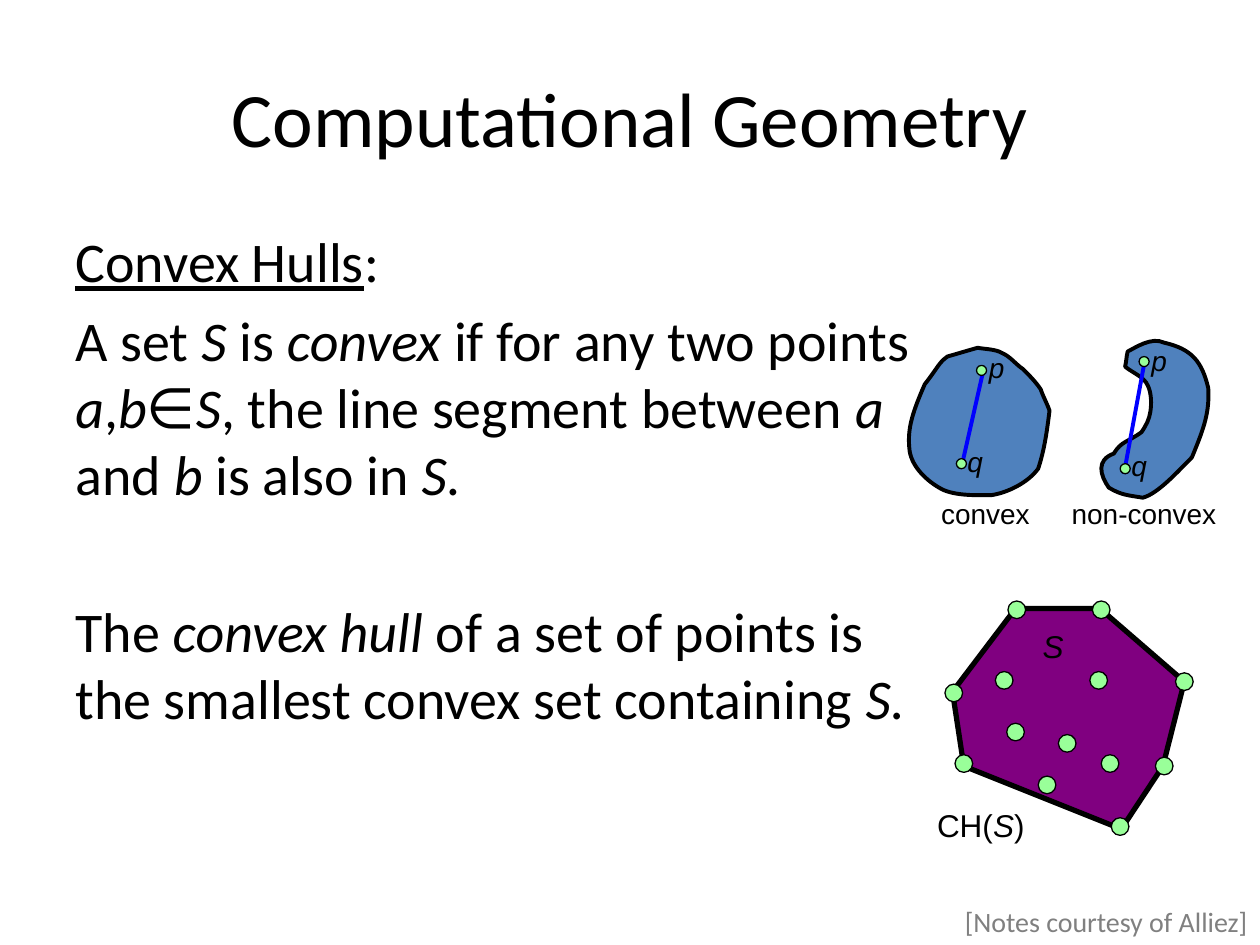
from lxml import etree
from pptx import Presentation
from pptx.dml.color import RGBColor
from pptx.enum.shapes import MSO_CONNECTOR, MSO_SHAPE
from pptx.enum.text import MSO_ANCHOR, PP_ALIGN
from pptx.oxml.ns import qn
from pptx.util import Pt

PX = 9144  # 100 px to the inch
BLACK = RGBColor(0x00, 0x00, 0x00)
WHITE = RGBColor(0xFF, 0xFF, 0xFF)
GRAY = RGBColor(0x80, 0x80, 0x80)
STEEL = RGBColor(0x4F, 0x81, 0xBD)
BLUE = RGBColor(0x00, 0x00, 0xFF)
GREEN = RGBColor(0x99, 0xFF, 0x99)
PURPLE = RGBColor(0x80, 0x00, 0x80)
LEFT, CENTER, RIGHT = PP_ALIGN.LEFT, PP_ALIGN.CENTER, PP_ALIGN.RIGHT
TOP, MIDDLE = MSO_ANCHOR.TOP, MSO_ANCHOR.MIDDLE
OVAL, STRAIGHT = MSO_SHAPE.OVAL, MSO_CONNECTOR.STRAIGHT

TITLE_FONT = {"name": "Calibri", "size": Pt(44)}
BODY_FONT = {"name": "Calibri", "size": Pt(32)}
CREDIT_FONT = {"name": "Calibri", "size": Pt(16)}
LABEL_FONT = {"name": "Arial", "size": Pt(16)}
HULL_FONT = {"name": "Arial", "size": Pt(18)}
ITALIC, UNDERLINE = {"italic": True}, {"underline": True}

# Each paragraph: space before in points, then its runs
BODY = [
    (0, [("Convex Hulls", UNDERLINE), (":", {})]),
    (6.4, [("A set ", {}), ("S", ITALIC), (" is ", {}), ("convex", ITALIC),
           (" if for any two points\v", {}), ("a", ITALIC), (",", {}),
           ("b", ITALIC), ("∈", {}), ("S", ITALIC),
           (", the line segment between ", {}), ("a\v", ITALIC),
           ("and ", {}), ("b", ITALIC), (" is also in ", {}), ("S.", ITALIC)]),
    (51, [("The ", {}), ("convex hull", ITALIC),
          (" of a set of points is\vthe smallest convex set containing ", {}),
          ("S.", ITALIC)]),
]

# An outline is a start point, then two controls and an end point per curve;
# everything is relative to the figure's own box
CONVEX = {
    "outline": [
        (32, 7), (39, 5), (49, 2), (56, 0), (60, 1), (70, 1), (75, 4),
        (82, 7), (86, 13), (92, 17), (97, 22), (102, 27), (106, 33),
        (108, 39), (111, 44), (113, 50), (111, 66), (109, 81), (104, 96),
        (96, 107), (80, 115), (67, 117), (58, 117), (38, 118), (27, 112),
        (16, 106), (4, 95), (2, 82), (0, 66), (3, 54), (14, 29),
        (25, 15), (25, 12), (32, 7)],
    "segment": (60, 20, 43, 95),
    "dots": [(39, 88), (55, 14)],
    "labels": [("q", 20, 72), ("p", 37, -3)],
    "caption": ("convex", 17, 113, 90),
}
NON_CONVEX = {
    "outline": [
        (54, 5), (76, 10), (84, 20), (89, 41), (90, 60), (86, 72), (76, 96),
        (65, 107), (49, 125), (37, 128), (25, 126), (20, 126), (10, 120),
        (3, 110), (0, 98), (14, 93), (20, 83), (25, 84), (36, 76),
        (40, 70), (42, 66), (43, 60), (44, 54), (44, 45), (41, 39),
        (38, 32), (29, 29), (23, 24), (24, 20), (24, 16), (25, 12),
        (31, 9), (44, 0), (54, 5)],
    "segment": (39, 17, 22, 109),
    "dots": [(19, 101), (34, 16)],
    "labels": [("p", 16, 1), ("q", 0, 84)],
    "caption": ("non-convex", -30, 122, 135),
}
HULL = [(6, 72), (56, 6), (123, 6), (190, 64), (173, 131), (140, 181), (15, 131)]
HULL_DOTS = [(50, 0), (124, 122), (0, 66), (117, 0), (115, 56), (49, 97), (183, 57),
             (167, 124), (40, 56), (132, 172), (74, 139), (90, 106), (8, 122)]


def add_text(shapes, box, paragraphs, font, align=RIGHT, color=BLACK,
             anchor=TOP, wrap=False):
    frame = shapes.add_textbox(*[length * PX for length in box]).text_frame
    frame.word_wrap = wrap
    frame.vertical_anchor = anchor
    for index, (space, runs) in enumerate(paragraphs):
        paragraph = frame.add_paragraph() if index else frame.paragraphs[0]
        paragraph.alignment = align
        paragraph.space_before = Pt(space)
        for text, style in runs:
            for part, piece in enumerate(text.split("\v")):
                if part:
                    paragraph.add_line_break()
                if not piece:
                    continue
                run = paragraph.add_run()
                run.text = piece
                run.font.color.rgb = color
                for key, value in {**font, **style}.items():
                    setattr(run.font, key, value)


def paint(shape, fill, width):
    shape.shadow.inherit = False
    shape.fill.solid()
    shape.fill.fore_color.rgb = fill
    shape.line.color.rgb = BLACK
    shape.line.width = Pt(width)


def add_outline(shapes, left, top, points, fill, width):
    builder = shapes.build_freeform(*points[0], scale=PX)
    builder.add_line_segments(points[1:], close=True)
    shape = builder.convert_to_shape(left * PX, top * PX)
    paint(shape, fill, width)
    return shape


def bend(shape):
    """Turn every three line steps of an outline into one cubic curve."""
    steps = list(shape._element.iter(qn("a:lnTo")))
    for first in range(0, len(steps) - 2, 3):
        curve = etree.Element(qn("a:cubicBezTo"))
        steps[first].addprevious(curve)
        for step in steps[first:first + 3]:
            curve.append(step[0])
            step.getparent().remove(step)


def add_dots(shapes, left, top, dots, size):
    for x, y in dots:
        dot = shapes.add_shape(OVAL, (left + x) * PX, (top + y) * PX, size * PX, size * PX)
        paint(dot, GREEN, 0.75)


def add_set_figure(slide, left, top, figure):
    shapes = slide.shapes.add_group_shape().shapes
    bend(add_outline(shapes, left, top, figure["outline"], STEEL, 2.25))
    # Segment between p and q
    x1, y1, x2, y2 = figure["segment"]
    segment = shapes.add_connector(STRAIGHT, (left + x1) * PX, (top + y1) * PX,
                                   (left + x2) * PX, (top + y2) * PX)
    segment.line.color.rgb = BLUE
    segment.line.width = Pt(2.25)
    etree.SubElement(segment._element.spPr, qn("a:effectLst"))
    # Point names, points and caption
    for name, x, y in figure["labels"]:
        add_text(shapes, (left + x, top + y, 50, 37), [(0, [(name, ITALIC)])],
                 LABEL_FONT, wrap=True)
    add_dots(shapes, left, top, figure["dots"], 8)
    caption, x, y, width = figure["caption"]
    add_text(shapes, (left + x, top + y, width, 37), [(0, [(caption, {})])], LABEL_FONT)


def add_hull_figure(slide, left, top):
    shapes = slide.shapes.add_group_shape().shapes
    add_outline(shapes, left, top, HULL, PURPLE, 3)
    add_text(shapes, (left - 17, top + 158, 90, 40),
             [(0, [("CH(", {}), ("S", ITALIC), (")", {})])], HULL_FONT)
    # The point set with its name
    point_set = shapes.add_group_shape().shapes
    add_dots(point_set, left, top, HULL_DOTS, 14)
    add_text(point_set, (left + 67, top + 16, 37, 40), [(0, [("S", ITALIC)])], HULL_FONT)


def main():
    presentation = Presentation()
    presentation.slide_width, presentation.slide_height = 1000 * PX, 750 * PX
    slide = presentation.slides.add_slide(presentation.slide_layouts[6])
    slide.background.fill.solid()
    slide.background.fill.fore_color.rgb = WHITE
    # Title and body
    add_text(slide.shapes, (50, 30, 900, 125), [(0, [("Computational Geometry", {})])],
             TITLE_FONT, CENTER, anchor=MIDDLE, wrap=True)
    add_text(slide.shapes, (50, 175, 900, 495), BODY, BODY_FONT, LEFT, wrap=True)
    # Convex and non-convex sets
    add_set_figure(slide, 870, 267, NON_CONVEX)
    add_set_figure(slide, 720, 276, CONVEX)
    # Credit
    add_text(slide.shapes, (752, 713, 248, 37),
             [(0, [("[Notes courtesy of Alliez]", {})])], CREDIT_FONT, color=GRAY)
    # Convex hull
    add_hull_figure(slide, 750, 477)
    presentation.save("out.pptx")


if __name__ == "__main__":
    main()
